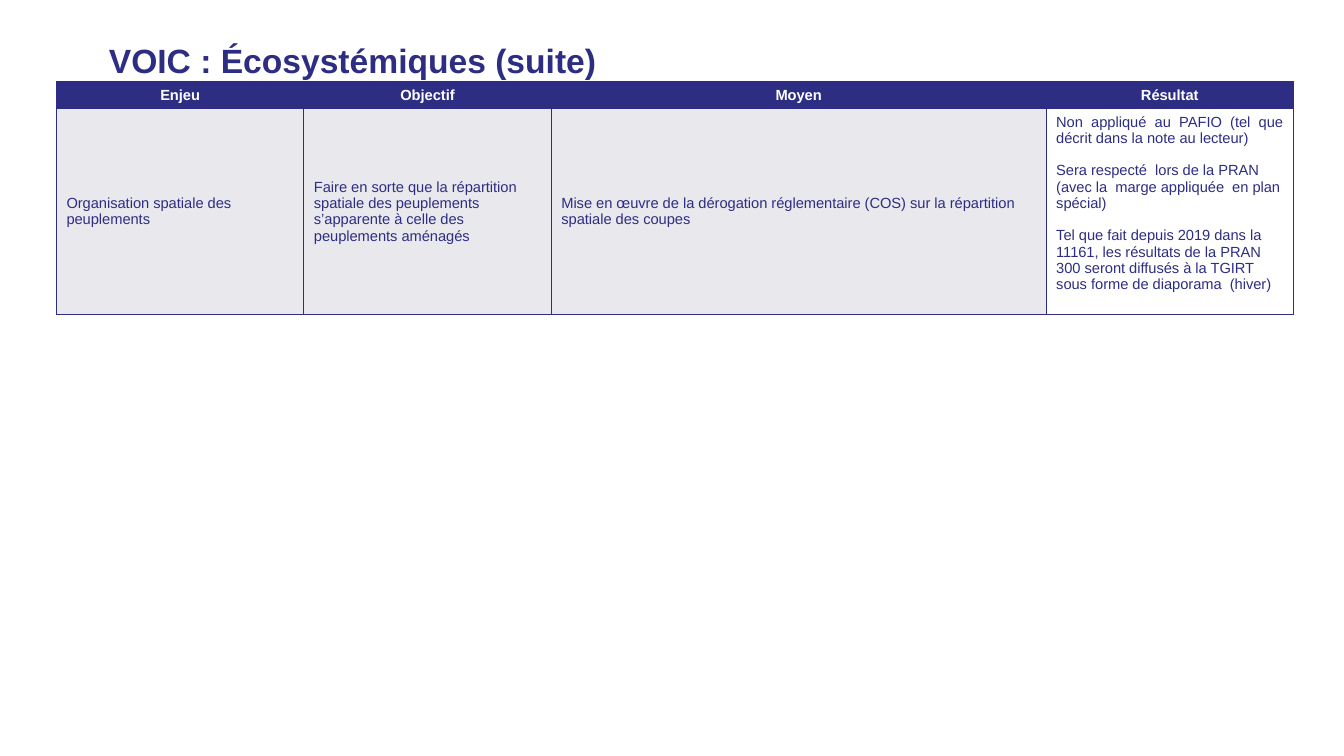
"""Build the slide on ecosystem issues: a title above a four-column table."""
from lxml.etree import SubElement
from pptx import Presentation
from pptx.dml.color import RGBColor
from pptx.enum.text import MSO_ANCHOR as Anchor, PP_ALIGN as Align
from pptx.oxml.ns import qn
from pptx.util import Inches, Pt

NAVY, GREY, WHITE = "2D2E83", "E8E8ED", "FFFFFF"


def color(code):
    return RGBColor.from_string(code)


def write(frame, texts, font, align):
    frame.text = "\n".join(texts)
    for index, para in enumerate(frame.paragraphs):
        para.alignment = align
        if index:
            para.space_before = Pt(11.5)
        for span in para.runs:
            span.font.color.rgb = color(font["color"])
            for name in ("name", "size", "bold"):
                setattr(span.font, name, font[name])


deck = Presentation()
deck.slide_width, deck.slide_height = Inches(13.33), Inches(7.5)
page = deck.slides.add_slide(deck.slide_layouts[5])

title = page.shapes.title
place = {"left": 0.98, "top": 0.39, "width": 11.5, "height": 0.6}
for name, value in place.items():
    setattr(title, name, Inches(value))
title.text_frame.vertical_anchor = Anchor.TOP
title_font = {"name": "Arial", "size": Pt(24), "bold": True, "color": NAVY}
write(title.text_frame, ["VOIC : Écosystémiques (suite)"], title_font, Align.LEFT)
title.text_frame.paragraphs[0].line_spacing = 0.9

rows = [
    [["Enjeu"], ["Objectif"], ["Moyen"], ["Résultat"]],
    [
        ["Organisation spatiale des peuplements"],
        ["Faire en sorte que la répartition spatiale des peuplements "
         "s’apparente à celle des peuplements aménagés"],
        ["Mise en œuvre de la dérogation réglementaire (COS) sur la "
         "répartition spatiale des coupes"],
        ["Non appliqué au PAFIO (tel que décrit dans la note au lecteur)",
         "Sera respecté  lors de la PRAN (avec la  marge appliquée  en plan spécial)",
         "Tel que fait depuis 2019 dans la 11161, les résultats de la PRAN 300 "
         "seront diffusés à la TGIRT sous forme de diaporama  (hiver)"],
    ],
]
shares = [1, 1, 2, 1]
heights = [0.27, 2.04]
table_width = 12.27
table = page.shapes.add_table(
    len(rows), len(shares), Inches(0.56), Inches(0.81),
    Inches(table_width), Inches(sum(heights))).table
for column, share in zip(table.columns, shares):
    column.width = Inches(table_width * share / sum(shares))
for row, height in zip(table.rows, heights):
    row.height = Inches(height)

for r, texts_in_row in enumerate(rows):
    header = r == 0
    font = {"name": "Arial", "size": Pt(10.5), "bold": header,
            "color": WHITE if header else NAVY}
    for c, texts in enumerate(texts_in_row):
        result = not header and c == len(shares) - 1
        cell = table.cell(r, c)
        cell.vertical_anchor = Anchor.TOP if result else Anchor.MIDDLE
        write(cell.text_frame, texts, font, Align.CENTER if header else Align.LEFT)
        if result:
            cell.text_frame.paragraphs[0].alignment = Align.JUSTIFY
        properties = cell._tc.get_or_add_tcPr()
        for side in ("a:lnL", "a:lnR", "a:lnT", "a:lnB"):
            border = SubElement(properties, qn(side), w=str(Pt(1)))
            SubElement(SubElement(border, qn("a:solidFill")), qn("a:srgbClr"), val=NAVY)
        cell.fill.solid()
        cell.fill.fore_color.rgb = color(NAVY if header else WHITE if result else GREY)

deck.save("out.pptx")
